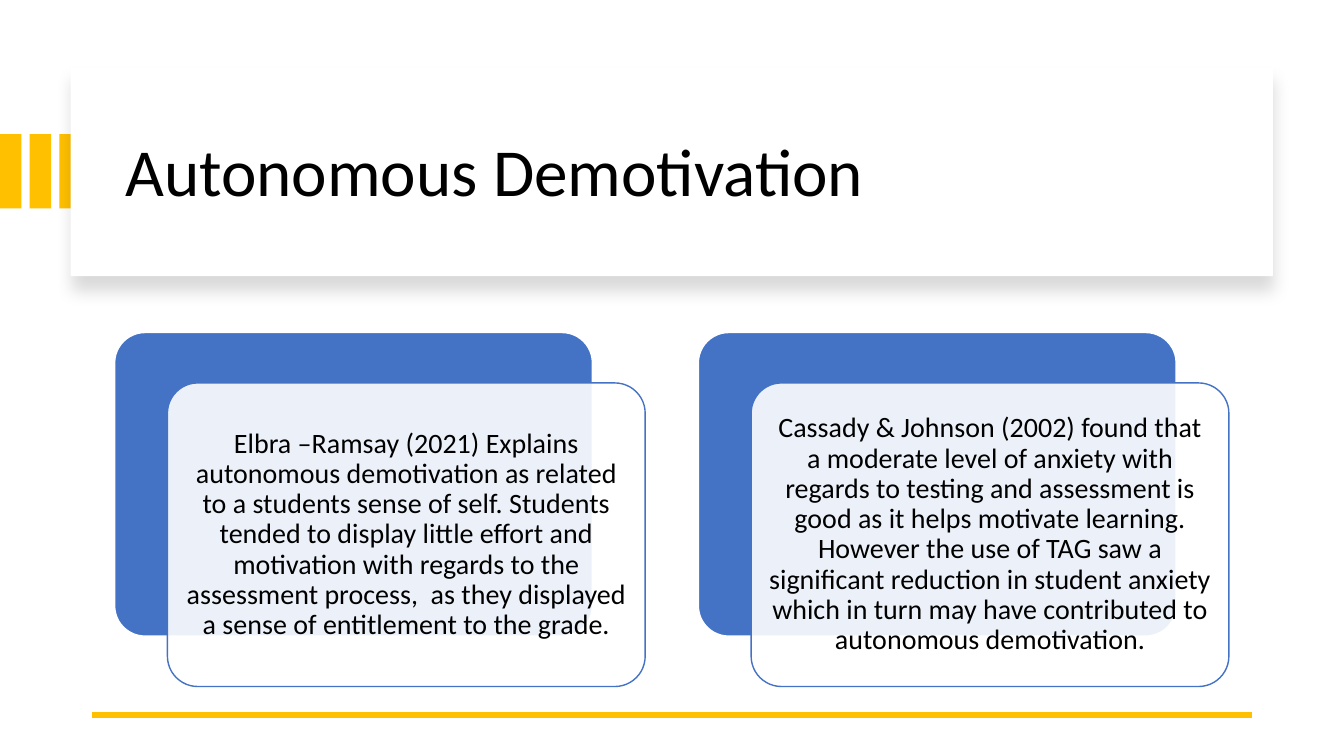
from lxml import etree
from pptx import Presentation
from pptx.dml.color import RGBColor
from pptx.enum.shapes import MSO_CONNECTOR, MSO_SHAPE
from pptx.enum.text import MSO_ANCHOR, PP_ALIGN
from pptx.oxml import parse_xml
from pptx.oxml.ns import nsdecls, qn
from pptx.util import Cm, Pt

COLORS = {"gold": "FFC000", "blue": "4472C4", "white": "FFFFFF", "black": "000000"}
FONT = "Calibri"
FINDINGS = [
    "Elbra –Ramsay (2021) Explains autonomous demotivation as related to a "
    "students sense of self. Students tended to display little effort and "
    "motivation with regards to the assessment process,  as they displayed "
    "a sense of entitlement to the grade.",
    "Cassady & Johnson (2002) found that a moderate level of anxiety with "
    "regards to testing and assessment is good as it helps motivate learning. "
    "However the use of TAG saw a significant reduction in student anxiety "
    "which in turn may have contributed to autonomous demotivation.",
]


def rgb(name):
    return RGBColor.from_string(COLORS[name])


def add_box(s, left, top, width, height, fill, line=None, radius=None, opacity=None):
    """Add a rectangle in cm, rounded if radius is set; opacity is in percent."""
    kind = MSO_SHAPE.RECTANGLE if radius is None else MSO_SHAPE.ROUNDED_RECTANGLE
    sp = s.shapes.add_shape(kind, Cm(left), Cm(top), Cm(width), Cm(height))
    sp.shadow.inherit = False
    if radius is not None:
        sp.adjustments[0] = radius
    sp.fill.solid()
    sp.fill.fore_color.rgb = rgb(fill)
    if opacity is not None:
        color = sp.fill._xPr.find(qn("a:solidFill"))[0]
        etree.SubElement(color, qn("a:alpha")).set("val", str(opacity * 1000))
    if line:
        sp.line.color.rgb = rgb(line)
        sp.line.width = Pt(1)
    else:
        sp.line.fill.background()
    return sp


def add_drop_shadow(sp):
    effects = sp._element.spPr.find(qn("a:effectLst"))
    effects.append(parse_xml(
        f'<a:outerShdw {nsdecls("a")} blurRad="{Pt(11)}" dist="{Pt(10)}" '
        f'dir="5400000" algn="t" rotWithShape="0"><a:srgbClr val="{COLORS["black"]}">'
        '<a:alpha val="15000"/></a:srgbClr></a:outerShdw>'))


def add_text(s, left, top, width, height, text, size, align=PP_ALIGN.LEFT, inset=None):
    sp = s.shapes.add_textbox(Cm(left), Cm(top), Cm(width), Cm(height))
    tf = sp.text_frame
    tf.word_wrap = True
    tf.vertical_anchor = MSO_ANCHOR.MIDDLE
    if inset is not None:
        tf.margin_left = tf.margin_right = tf.margin_top = tf.margin_bottom = Cm(inset)
    p = tf.paragraphs[0]
    p.alignment = align
    p.line_spacing = 0.9
    r = p.add_run()
    r.text = text
    r.font.name = FONT
    r.font.size = Pt(size)
    r.font.color.rgb = rgb("black")


def add_rule(s, left, right, y):
    line = s.shapes.add_connector(MSO_CONNECTOR.STRAIGHT, Cm(left), Cm(y), Cm(right), Cm(y))
    line.line.color.rgb = rgb("gold")
    line.line.width = Pt(4.5)
    etree.SubElement(line._element.spPr, qn("a:effectLst"))


def add_title(s, text):
    """Add the gold bars, the shadowed title panel and the title."""
    for i in range(3):
        add_box(s, 0.75 * i, 3.38, 0.54, 1.87, "gold")
    add_drop_shadow(add_box(s, 1.78, 1.7, 30.3, 5.26, "white"))
    add_text(s, 2.91, 2.24, 28.27, 4.32, text, size=48)


def add_finding(s, left, top, text):
    """Add a blue card, an offset translucent card and the text over it."""
    width, height = 12.04, 7.65
    add_box(s, left, top, width, height, "blue", line="white", radius=0.1)
    add_box(s, left + 1.33, top + 1.27, width, height, "white",
            line="blue", radius=0.1, opacity=90)
    add_text(s, left + 1.56, top + 1.5, 11.58, 7.19, text, size=20,
             align=PP_ALIGN.CENTER, inset=0.21)


def main():
    prs = Presentation()
    prs.slide_width, prs.slide_height = Cm(33.87), Cm(19.05)
    s = prs.slides.add_slide(prs.slide_layouts[6])
    add_title(s, "Autonomous Demotivation")
    add_rule(s, 2.33, 31.55, 18.01)
    for i, text in enumerate(FINDINGS):
        add_finding(s, 2.89 + 14.71 * i, 8.38, text)
    prs.save("out.pptx")


if __name__ == "__main__":
    main()
